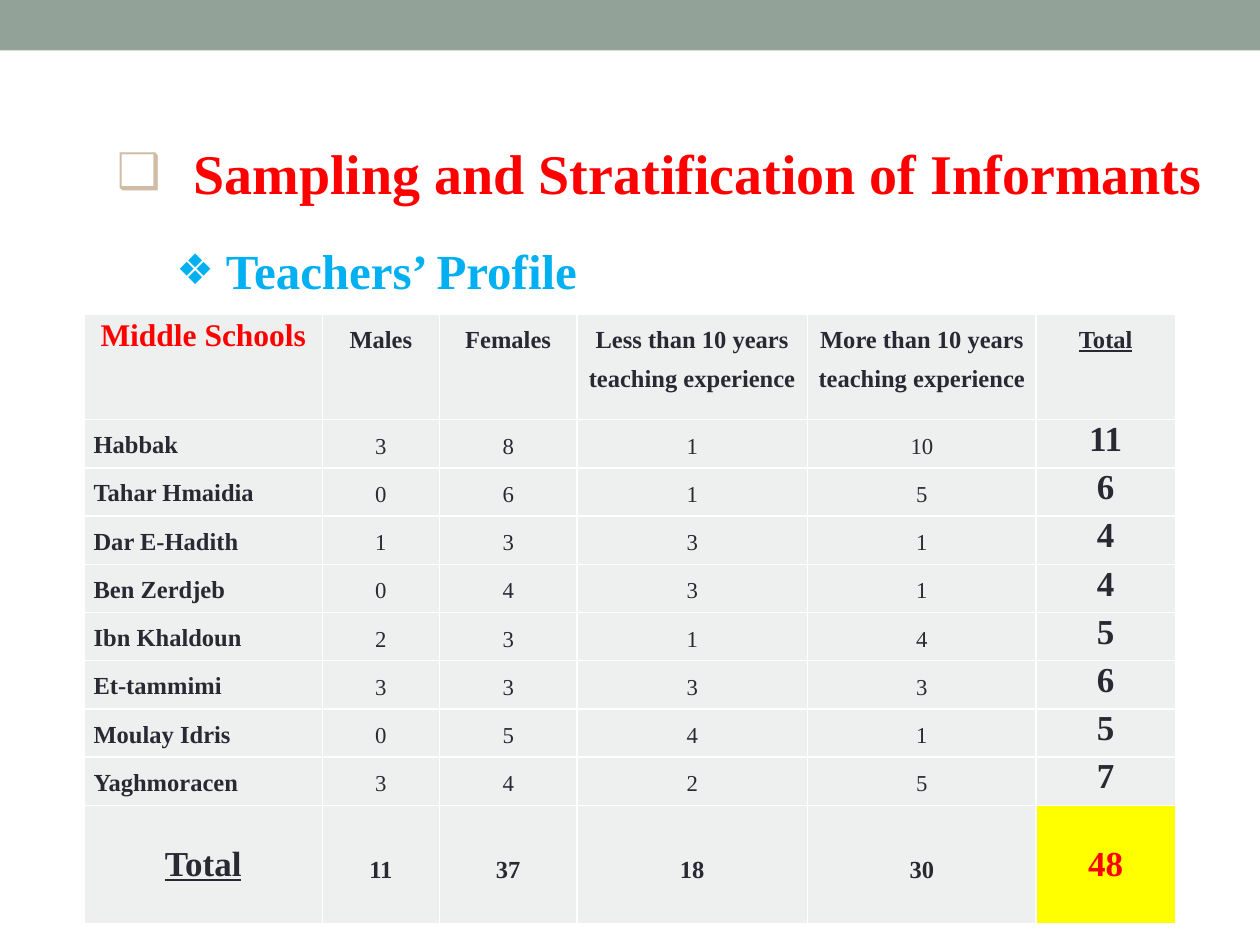
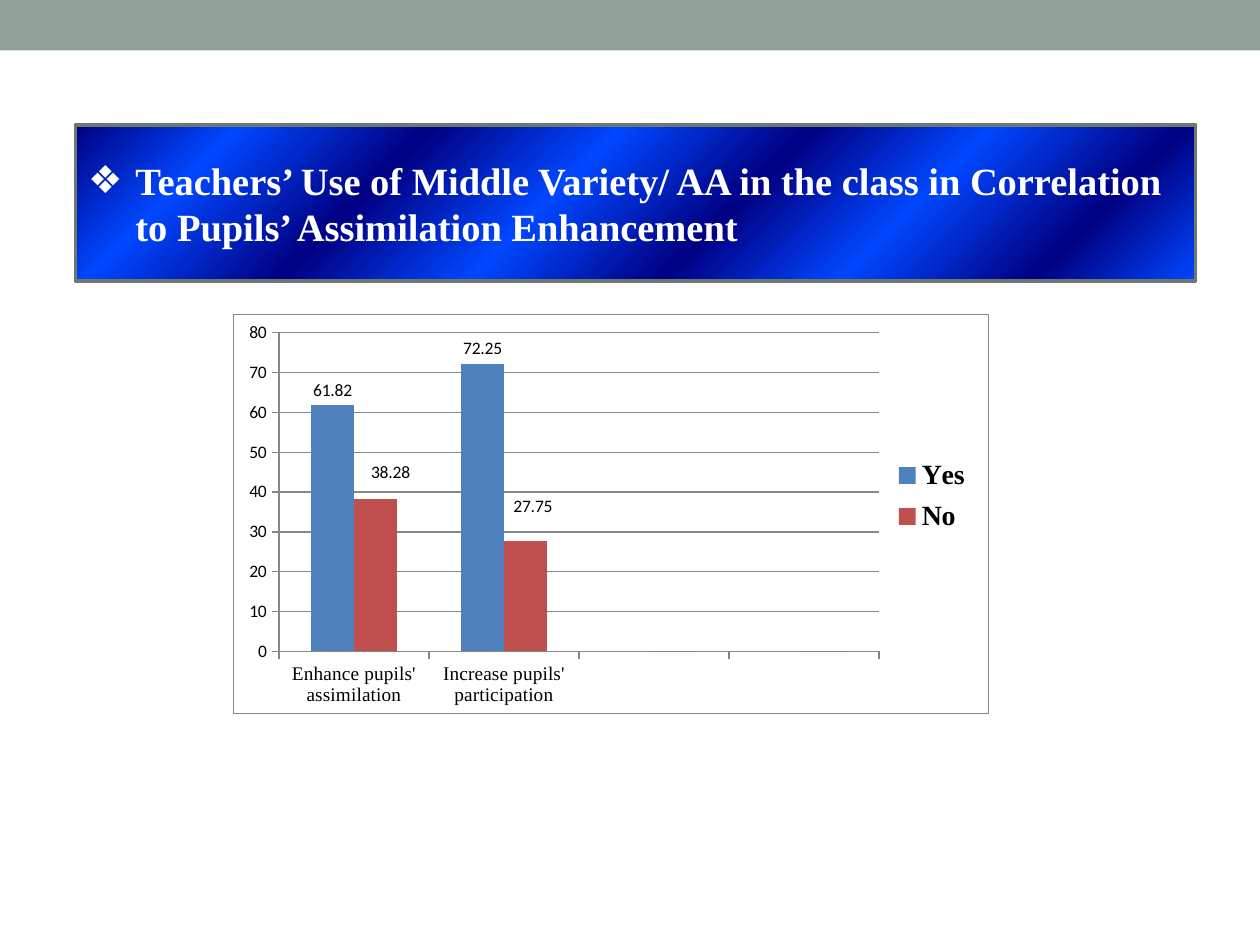
"""Builds two survey slides: the teachers' profile table and the assimilation chart."""
from pptx import Presentation
from pptx.chart.data import CategoryChartData as ChartData
from pptx.dml.color import RGBColor as RGB
from pptx.enum.chart import XL_CHART_TYPE as CT, XL_LABEL_POSITION as LP
from pptx.enum.chart import XL_LEGEND_POSITION as LEG, XL_TICK_MARK as TICK
from pptx.enum.shapes import MSO_SHAPE as SHAPE
from pptx.enum.text import MSO_ANCHOR as ANCHOR, MSO_AUTO_SIZE as AUTO, PP_ALIGN as AL
from pptx.oxml import parse_xml
from pptx.oxml.ns import nsdecls
from pptx.util import Pt

C = {"band": "93A299", "red": "FF0000", "sky": "00B0F0", "tan": "CEBCA4", "ink": "292934",
     "cell": "EEF0EF", "yellow": "FFFF00", "white": "FFFFFF", "black": "000000",
     "navy": "000082", "blue": "0047FF", "frame": "6D7871", "grid": "868686",
     "yes": "4F81BD", "no": "C0504D"}
SERIF = "Times New Roman"

HEADING = "Sampling and Stratification of Informants"
SUBHEADING = "Teachers’ Profile"
HEADER = ["Middle Schools", "Males", "Females", "Less than 10 years teaching experience",
          "More than 10 years teaching experience", "Total"]
SCHOOLS = [
    ("Habbak", 3, 8, 1, 10, 11),
    ("Tahar Hmaidia", 0, 6, 1, 5, 6),
    ("Dar E-Hadith", 1, 3, 3, 1, 4),
    ("Ben Zerdjeb", 0, 4, 3, 1, 4),
    ("Ibn Khaldoun", 2, 3, 1, 4, 5),
    ("Et-tammimi", 3, 3, 3, 3, 6),
    ("Moulay Idris", 0, 5, 4, 1, 5),
    ("Yaghmoracen", 3, 4, 2, 5, 7),
]
TOTALS = ("Total", 11, 37, 18, 30, 48)
COL_W = [136, 67, 78.5, 131.8, 130.7, 79.5]
HEAD_H, ROW_H, TOTAL_H, LINE_H = 60.3, 27.57, 67.8, 22.5

CHART_TITLE = ("Teachers’ Use of Middle Variety/ AA in the class in Correlation "
               "to Pupils’ Assimilation Enhancement")
STOPS = [0, 13, 28, 43, 58, 72, 87, 100]
CATS = ["Enhance pupils' assimilation", "Increase pupils' participation", "", ""]
SERIES = [("Yes", "yes", (61.82, 72.25, 0, 0)),
          ("No", "no", (38.28, 27.75, 0, 0))]
NO_LABEL_SHIFTS = [(0.02, -0.03), (0.01, -0.05)]


def rgb(name):
    return RGB.from_string(C[name])


def style(font, size, color, bold=False, name=SERIF):
    font.size, font.bold, font.name = Pt(size), bold, name
    font.color.rgb = rgb(color)


def add_run(p, text, size, color, bold=True, name=SERIF):
    r = p.add_run()
    r.text = text
    style(r.font, size, color, bold, name)
    return r


def place(sp, left, top, width, height):
    sp.left, sp.top, sp.width, sp.height = Pt(left), Pt(top), Pt(width), Pt(height)


def bullet_text(sp, box, bullet, indent, runs, align=AL.LEFT, spacing=1.0,
                anchor=ANCHOR.TOP, wrap=True):
    place(sp, *box)
    tf = sp.text_frame
    tf.auto_size, tf.word_wrap, tf.vertical_anchor = AUTO.NONE, wrap, anchor
    p = tf.paragraphs[0]
    p.alignment, p.line_spacing, p.space_before = align, spacing, Pt(0)
    pPr = p._p.get_or_add_pPr()
    pPr.set("marL", str(Pt(indent)))
    pPr.set("indent", str(-Pt(indent)))
    pPr.append(parse_xml(f'<a:buFont {nsdecls("a")} typeface="Arial"/>'))
    pPr.append(parse_xml(f'<a:buChar {nsdecls("a")} char="{bullet}"/>'))
    for run in runs:
        add_run(p, *run)


def add_band(prs, s):
    sp = s.shapes.add_shape(SHAPE.RECTANGLE, 0, 0, prs.slide_width, Pt(28.8))
    sp.shadow.inherit = False
    sp.fill.solid()
    sp.fill.fore_color.rgb = rgb("band")
    sp.line.fill.background()
    prs.slide_master.shapes.element.insert(2, sp.element)


def set_borders(cell):
    tcPr = cell._tc.get_or_add_tcPr()
    for i, side in enumerate("LRTB"):
        tcPr.insert(i, parse_xml(
            f'<a:ln{side} {nsdecls("a")} w="{Pt(1)}"><a:solidFill>'
            f'<a:srgbClr val="{C["white"]}"/></a:solidFill></a:ln{side}>'))


def cell_look(row, col, last_row, last_col):
    """Returns size, colour, bold and underline of a cell's text."""
    if row == 0:
        return (18, "red", True, False) if col == 0 else (14, "ink", True, col == last_col)
    if row == last_row:
        size = 20 if col in (0, last_col) else 14
        return size, "red" if col == last_col else "ink", True, col == 0
    if col == 0:
        return 14, "ink", True, False
    return (20, "ink", True, False) if col == last_col else (13, "ink", False, False)


def add_profile_table(s):
    rows = [HEADER, *SCHOOLS, TOTALS]
    heights = [HEAD_H, *[ROW_H] * len(SCHOOLS), TOTAL_H]
    last_row, last_col = len(rows) - 1, len(HEADER) - 1
    tbl = s.shapes.add_table(len(rows), len(HEADER), Pt(48.2), Pt(179.5),
                             Pt(sum(COL_W)), Pt(sum(heights))).table
    tbl.first_row = tbl.horz_banding = False
    for column, width in zip(tbl.columns, COL_W):
        column.width = Pt(width)
    for i, (values, height) in enumerate(zip(rows, heights)):
        tbl.rows[i].height = Pt(height)
        for j, value in enumerate(values):
            cell = tbl.cell(i, j)
            cell.margin_left = cell.margin_right = Pt(5.3)
            cell.margin_top = Pt(LINE_H if i == last_row else 0)
            cell.margin_bottom = 0
            cell.fill.solid()
            corner = (i, j) == (last_row, last_col)
            cell.fill.fore_color.rgb = rgb("yellow" if corner else "cell")
            set_borders(cell)
            p = cell.text_frame.paragraphs[0]
            p.alignment = AL.JUSTIFY if j == 0 and 0 < i < last_row else AL.CENTER
            p.line_spacing = Pt(LINE_H)
            size, color, bold, underline = cell_look(i, j, last_row, last_col)
            add_run(p, str(value), size, color, bold).font.underline = underline


def profile_slide(prs):
    s = prs.slides.add_slide(prs.slide_layouts[1])
    add_band(prs, s)
    bullet_text(s.shapes.title, (59.5, 67.7, 635, 54), "❑", 36,
                [(" ", 28, "tan", True, "Arial"), (HEADING, 32, "red")], AL.CENTER, 1.2)
    bullet_text(s.placeholders[1], (93.6, 134, 245.5, 41), "❖", 22.3,
                [(" ", 24, "sky"), (SUBHEADING, 28, "sky")], wrap=False)
    add_profile_table(s)


def fill_stripes(sp):
    sp.fill.gradient()
    sp.fill.gradient_angle = 315
    stops = sp.element.xpath(".//a:gsLst")[0]
    for old in list(stops):
        stops.remove(old)
    for i, pos in enumerate(STOPS):
        color = C["blue" if i % 2 else "navy"]
        stops.append(parse_xml(f'<a:gs {nsdecls("a")} pos="{pos * 1000}">'
                               f'<a:srgbClr val="{color}"/></a:gs>'))


def manual_layout(**values):
    items = "".join(f'<c:{k} val="{v}"/>' for k, v in values.items())
    return parse_xml(f'<c:layout {nsdecls("c")}><c:manualLayout>{items}'
                     '</c:manualLayout></c:layout>')


def grey_line(line):
    line.color.rgb, line.width = rgb("grid"), Pt(0.75)


def label_points(chart):
    for series, (_, _, values) in zip(chart.plots[0].series, SERIES):
        series.data_labels.show_value = True
        series.data_labels.position = LP.OUTSIDE_END
        for i, value in enumerate(values):
            if series.name == "No" or not value:
                series.points[i].data_label.position = LP.OUTSIDE_END
    for label in chart.element.xpath(".//c:dLbl"):
        index = int(label.xpath("./c:idx/@val")[0])
        if CATS[index]:
            x, y = NO_LABEL_SHIFTS[index]
            label.insert(1, manual_layout(x=x, y=y))
        else:
            for part in list(label)[1:]:
                label.remove(part)
            label.append(parse_xml(f'<c:delete {nsdecls("c")} val="1"/>'))
    for leader in chart.element.xpath(".//c:showLeaderLines"):
        leader.set("val", "0")


def add_answer_chart(s):
    data = ChartData()
    data.categories = CATS
    for name, _, values in SERIES:
        data.add_series(name, values)
    chart = s.shapes.add_chart(CT.COLUMN_CLUSTERED, Pt(133.2), Pt(179.5),
                               Pt(432), Pt(228.5), data).chart
    chart.has_title = False
    style(chart.font, 10, "black", name="Calibri")
    chart.has_legend = True
    chart.legend.position, chart.legend.include_in_layout = LEG.RIGHT, False
    style(chart.legend.font, 16, "black", True)
    chart.element.xpath(".//c:legend")[0].insert(1, manual_layout(
        xMode="edge", yMode="edge", x=0.86, y=0.34, w=0.13, h=0.23))

    cat, val = chart.category_axis, chart.value_axis
    style(cat.tick_labels.font, 11, "black")
    style(val.tick_labels.font, 10, "black", name="Calibri")
    val.minimum_scale, val.maximum_scale, val.major_unit = 0, 80, 10
    for axis in (cat, val):
        axis.major_tick_mark, axis.minor_tick_mark = TICK.OUTSIDE, TICK.NONE
        grey_line(axis.format.line)
    grey_line(val.major_gridlines.format.line)

    plot = chart.plots[0]
    plot.gap_width, plot.overlap, plot.vary_by_categories = 150, 0, False
    for series, (_, color, _) in zip(plot.series, SERIES):
        series.format.fill.solid()
        series.format.fill.fore_color.rgb = rgb(color)
    label_points(chart)

    area = chart.element.xpath(".//c:plotArea")[0]
    for old in area.xpath("./c:layout"):
        area.remove(old)
    area.insert(0, manual_layout(layoutTarget="inner", xMode="edge", yMode="edge",
                                 x=0.06, y=0.045, w=0.795, h=0.8))
    chart.element.xpath("./c:chart")[0].addnext(parse_xml(
        f'<c:spPr {nsdecls("c", "a")}><a:solidFill><a:srgbClr val="{C["white"]}"/></a:solidFill>'
        f'<a:ln w="{Pt(0.75)}"><a:solidFill><a:srgbClr val="{C["grid"]}"/></a:solidFill></a:ln>'
        '</c:spPr>'))


def chart_slide(prs):
    s = prs.slides.add_slide(prs.slide_layouts[5])
    title = s.shapes.title
    bullet_text(title, (43.2, 71.3, 640, 89.2), "❖", 27,
                [(CHART_TITLE, 22, "white")], anchor=ANCHOR.MIDDLE)
    fill_stripes(title)
    title.line.color.rgb, title.line.width = rgb("frame"), Pt(2.08)
    add_answer_chart(s)


def main():
    prs = Presentation()
    prs.slide_width, prs.slide_height = Pt(720), Pt(540)
    profile_slide(prs)
    chart_slide(prs)
    prs.save("out.pptx")


if __name__ == "__main__":
    main()
